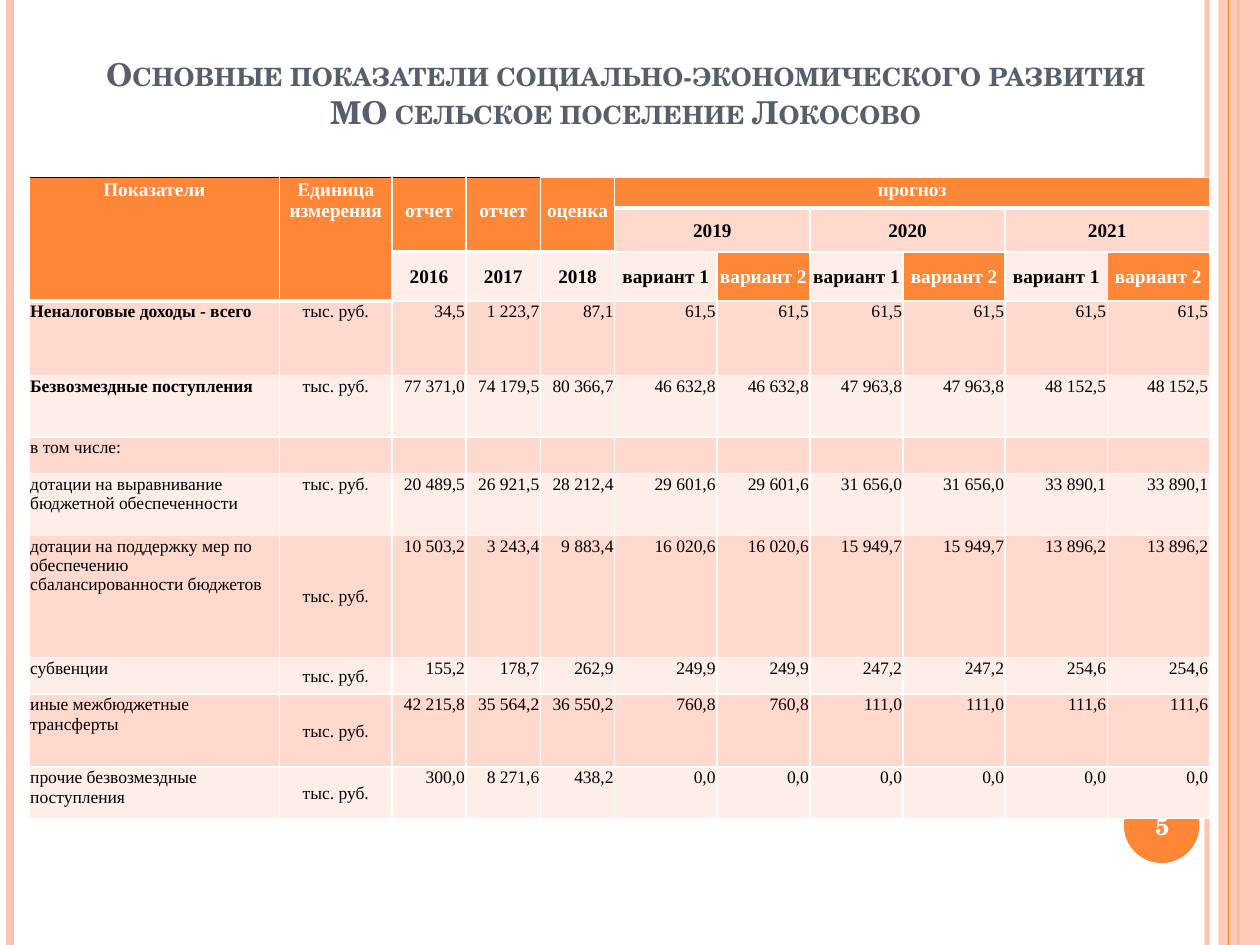
import pptx
import pptx.dml.color
import pptx.enum.shapes
import pptx.enum.text
import pptx.oxml
import pptx.oxml.ns
import pptx.util
from pptx.util import Inches

RGBColor = pptx.dml.color.RGBColor
ORANGE = RGBColor(0xFE, 0x86, 0x37)
PEACH = RGBColor(0xFE, 0xC3, 0xAE)
BAND_DARK = RGBColor(0xFF, 0xD9, 0xCE)
BAND_LIGHT = RGBColor(0xFF, 0xED, 0xE8)
SLATE = RGBColor(0x57, 0x5F, 0x6D)
WHITE = RGBColor(0xFF, 0xFF, 0xFF)
BLACK = RGBColor(0, 0, 0)

HEADING_FONT = "TeX Gyre Schola"
TABLE_FONT = "Times New Roman"
ALIGN = pptx.enum.text.PP_ALIGN
ANCHOR = pptx.enum.text.MSO_ANCHOR
SHAPE = pptx.enum.shapes.MSO_SHAPE

TITLE = ("Основные показатели социально-экономического развития \v"
         "МО сельское поселение Локосово ")
COLUMN_WIDTHS = [1.99, 0.89, 0.59, 0.59, 0.59, 0.81, 0.74, 0.74, 0.81, 0.81, 0.81]
ROW_HEIGHTS = [0.24, 0.34, 0.39, 0.59, 0.49, 0.29, 0.49, 0.97, 0.29, 0.58, 0.41]
HEADER_ROWS = 3
# row, column, row span, column span, text
TOP_HEADERS = [
    (0, 0, 3, 1, "Показатели"),
    (0, 1, 3, 1, "Единица измерения"),
    (0, 2, 2, 1, "отчет"),
    (0, 3, 2, 1, "отчет"),
    (0, 4, 2, 1, "оценка"),
    (0, 5, 1, 6, "прогноз"),
]
FORECAST_YEARS = ["2019", "2020", "2021"]
SUBHEADERS = ["2016", "2017", "2018"] + ["вариант 1", "вариант 2"] * 3
UNIT = "тыс. руб."
# label, bold label, unit anchor, three yearly values, one forecast per year
INDICATORS = [
    ("Неналоговые доходы - всего", True, ANCHOR.TOP,
     ["34,5", "1 223,7", "87,1"], ["61,5", "61,5", "61,5"]),
    ("Безвозмездные поступления", True, ANCHOR.TOP,
     ["77 371,0", "74 179,5", "80 366,7"], ["46 632,8", "47 963,8", "48 152,5"]),
    ("в том числе:", False, None, [""] * 3, [""] * 3),
    ("дотации на выравнивание бюджетной обеспеченности", False, ANCHOR.TOP,
     ["20 489,5", "26 921,5", "28 212,4"], ["29 601,6", "31 656,0", "33 890,1"]),
    ("дотации на поддержку мер по обеспечению сбалансированности бюджетов",
     False, ANCHOR.MIDDLE,
     ["10 503,2", "3 243,4", "9 883,4"], ["16 020,6", "15 949,7", "13 896,2"]),
    ("субвенции", False, ANCHOR.MIDDLE,
     ["155,2", "178,7", "262,9"], ["249,9", "247,2", "254,6"]),
    ("иные межбюджетные трансферты", False, ANCHOR.MIDDLE,
     ["42 215,8", "35 564,2", "36 550,2"], ["760,8", "111,0", "111,6"]),
    ("прочие безвозмездные поступления", False, ANCHOR.MIDDLE,
     ["300,0", "8 271,6", "438,2"], ["0,0", "0,0", "0,0"]),
]


def set_font(font, name, size, color, bold):
    font.name = name
    font.size = pptx.util.Pt(size)
    font.color.rgb = color
    font.bold = bold


def set_opacity(element, percent):
    """Make the solid colour inside the element partly transparent."""
    color = element.find(".//" + pptx.oxml.ns.qn("a:srgbClr"))
    pptx.oxml.xmlchemy.OxmlElement("a:alpha")
    alpha = pptx.oxml.xmlchemy.OxmlElement("a:alpha")
    alpha.set("val", str(percent * 1000))
    color.append(alpha)


def add_plain_shape(slide, kind, left, top, width, height, color):
    shape = slide.shapes.add_shape(
        kind, Inches(left), Inches(top), Inches(width), Inches(height))
    shape.shadow.inherit = False
    shape.fill.solid()
    shape.fill.fore_color.rgb = color
    shape.line.fill.background()
    return shape


def add_stripe(slide, x, height, color, width, opacity=100):
    stripe = slide.shapes.add_connector(
        pptx.enum.shapes.MSO_CONNECTOR.STRAIGHT,
        Inches(x), 0, Inches(x), Inches(height))
    stripe.line.color.rgb = color
    stripe.line.width = pptx.util.Pt(width)
    properties = stripe._element.spPr
    if opacity < 100:
        set_opacity(properties, opacity)
    properties.append(pptx.oxml.xmlchemy.OxmlElement("a:effectLst"))


def add_side_stripes(slide, width, height):
    add_stripe(slide, width - 0.42, height, PEACH, 3, 93)
    add_stripe(slide, 0.08, height, PEACH, 4.5)
    add_stripe(slide, width - 0.17, height, ORANGE, 1.5)
    band = add_plain_shape(slide, SHAPE.RECTANGLE, width - 0.33, 0, 0.33, height, PEACH)
    set_opacity(band._element.spPr, 87)
    add_stripe(slide, width - 0.25, height, ORANGE, 0.75)


def format_title(slide, left, top, width, height):
    title = slide.shapes.title
    title.left, title.top = Inches(left), Inches(top)
    title.width, title.height = Inches(width), Inches(height)
    frame = title.text_frame
    frame.vertical_anchor = ANCHOR.BOTTOM
    frame.word_wrap = True
    paragraph = frame.paragraphs[0]
    paragraph.text = TITLE
    paragraph.alignment = ALIGN.CENTER
    for run in paragraph.runs:
        set_font(run.font, HEADING_FONT, 18, SLATE, True)
        run._r.get_or_add_rPr().set("cap", "small")


def set_borders(cell, top=BLACK, bottom_width=1):
    properties = cell._tc.get_or_add_tcPr()
    sides = [("L", WHITE, 1), ("R", WHITE, 1), ("T", top, 1), ("B", WHITE, bottom_width)]
    for index, (side, color, width) in enumerate(sides):
        properties.insert(index, pptx.oxml.parse_xml(
            f'<a:ln{side} {pptx.oxml.ns.nsdecls("a")} w="{pptx.util.Pt(width)}">'
            f'<a:solidFill><a:srgbClr val="{color}"/></a:solidFill></a:ln{side}>'))


def fill_cell(cell, text, fill, size=10, color=BLACK, bold=False,
              align=ALIGN.CENTER, anchor=ANCHOR.TOP, top_margin=0.01):
    cell.fill.solid()
    cell.fill.fore_color.rgb = fill
    cell.margin_left = cell.margin_right = Inches(0.01)
    cell.margin_top, cell.margin_bottom = Inches(top_margin), 0
    cell.vertical_anchor = anchor
    paragraph = cell.text_frame.paragraphs[0]
    paragraph.alignment = align
    if text:
        paragraph.text = text
        set_font(paragraph.runs[0].font, TABLE_FONT, size, color, bold)
    else:
        paragraph._p.get_or_add_endParaRPr().set("sz", str(size * 100))


def fill_header(table):
    for row in range(HEADER_ROWS):
        for column in range(len(COLUMN_WIDTHS)):
            fill_cell(table.cell(row, column), "", ORANGE)
    for row, column, rows, columns, text in TOP_HEADERS:
        cell = table.cell(row, column)
        cell.merge(table.cell(row + rows - 1, column + columns - 1))
        fill_cell(cell, text, ORANGE, 11, WHITE, True,
                  top_margin=0.18 if rows == 2 else 0.01)
        set_borders(cell, BLACK if column < 4 else WHITE, 3)
    for index, year in enumerate(FORECAST_YEARS):
        column = 5 + 2 * index
        cell = table.cell(1, column)
        cell.merge(table.cell(1, column + 1))
        fill_cell(cell, year, BAND_DARK, 11, BLACK, True, anchor=ANCHOR.MIDDLE)
        set_borders(cell, WHITE)
    for column, text in enumerate(SUBHEADERS, start=2):
        second = text == "вариант 2"
        cell = table.cell(2, column)
        fill_cell(cell, text, ORANGE if second else BAND_LIGHT, 11,
                  WHITE if second else BLACK, True, anchor=ANCHOR.MIDDLE)
        set_borders(cell, WHITE)


def fill_indicators(table):
    for index, (label, bold, unit_anchor, actual, forecast) in enumerate(INDICATORS):
        row = HEADER_ROWS + index
        fill = BAND_LIGHT if index % 2 else BAND_DARK
        fill_cell(table.cell(row, 0), label, fill, bold=bold, align=ALIGN.LEFT)
        fill_cell(table.cell(row, 1), UNIT if unit_anchor else "", fill,
                  anchor=unit_anchor or ANCHOR.TOP)
        values = actual + [value for value in forecast for _ in range(2)]
        for column, value in enumerate(values, start=2):
            fill_cell(table.cell(row, column), value, fill, align=ALIGN.RIGHT)
        for cell in table.rows[row].cells:
            set_borders(cell, WHITE)


def add_indicator_table(slide, left, top):
    table = slide.shapes.add_table(
        len(ROW_HEIGHTS), len(COLUMN_WIDTHS), Inches(left), Inches(top),
        Inches(sum(COLUMN_WIDTHS)), Inches(sum(ROW_HEIGHTS))).table
    for column, width in zip(table.columns, COLUMN_WIDTHS):
        column.width = Inches(width)
    for row, height in zip(table.rows, ROW_HEIGHTS):
        row.height = Inches(height)
    fill_header(table)
    fill_indicators(table)


def add_page_number(slide, left, top, width, height):
    box = slide.shapes.add_textbox(Inches(left), Inches(top), Inches(width), Inches(height))
    frame = box.text_frame
    frame.word_wrap = True
    frame.vertical_anchor = ANCHOR.MIDDLE
    paragraph = frame.paragraphs[0]
    paragraph.text = "5"
    paragraph.alignment = ALIGN.CENTER
    set_font(paragraph.font, HEADING_FONT, 14, WHITE, True)


def main():
    presentation = pptx.Presentation()
    presentation.slide_width, presentation.slide_height = Inches(10), Inches(7.5)
    slide = presentation.slides.add_slide(presentation.slide_layouts[5])
    add_side_stripes(slide, 10, 7.5)
    add_plain_shape(slide, SHAPE.OVAL, 8.92, 6.25, 0.6, 0.6, ORANGE)
    format_title(slide, 0.23, 0.23, 9.53, 0.86)
    add_indicator_table(slide, 0.23, 1.41)
    add_page_number(slide, 8.89, 6.27, 0.67, 0.57)
    presentation.save("out.pptx")


if __name__ == "__main__":
    main()
